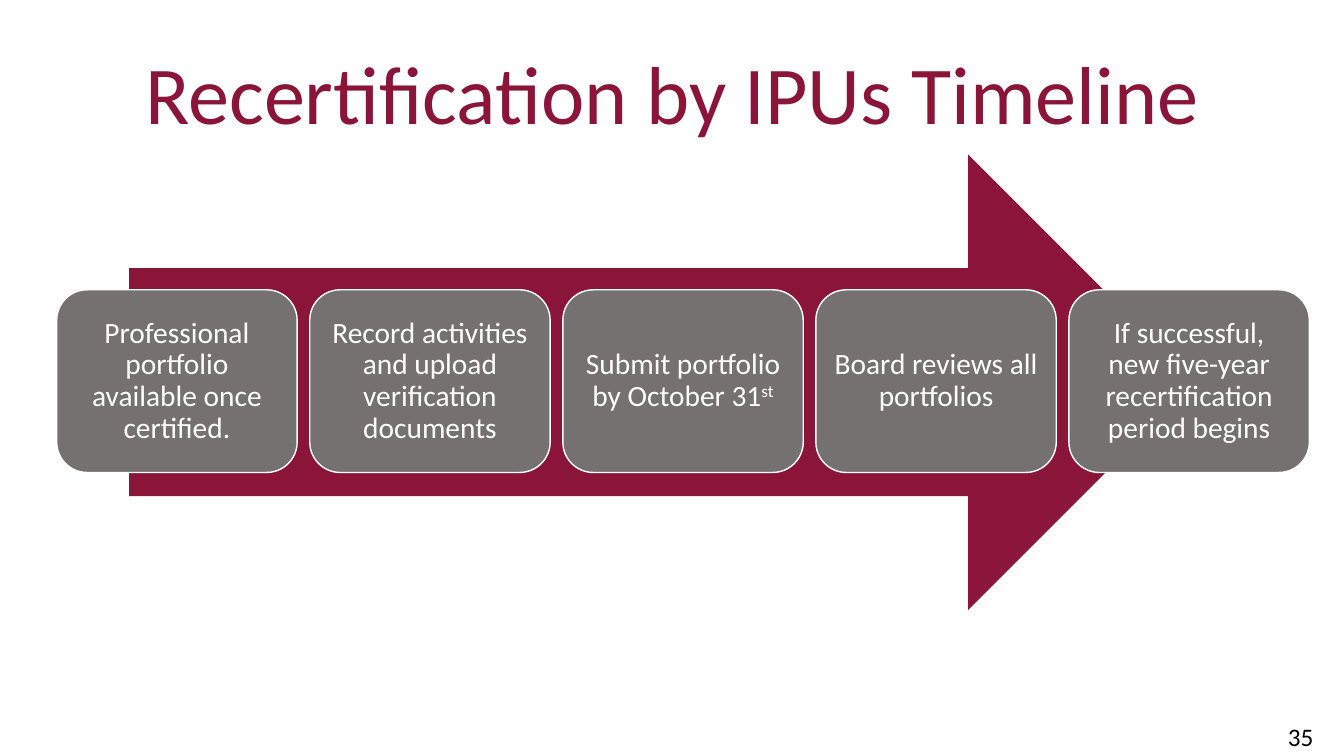
from dataclasses import dataclass

from pptx import Presentation
from pptx.dml.color import RGBColor
from pptx.enum.shapes import MSO_SHAPE as Preset
from pptx.enum.text import MSO_ANCHOR as Anchor, MSO_AUTO_SIZE as AutoSize, PP_ALIGN as Align
from pptx.shapes.autoshape import Shape
from pptx.slide import Slide
from pptx.util import Emu, Pt

EMU_PER_PX = 9525
MAROON, GRAY, WHITE, BLACK = "8A1538", "767171", "FFFFFF", "000000"


@dataclass(frozen=True)
class Box:
    """A rectangle in px."""
    left: int
    top: int
    width: int
    height: int


@dataclass(frozen=True)
class Step:
    """A timeline step with an optional superscript ending."""
    wording: str
    ordinal: str = ""


FIRST_CARD = Box(54, 276, 229, 174)
CARD_PITCH = 241
STEPS = (
    Step("Professional portfolio available once certified."),
    Step("Record activities and upload verification documents"),
    Step("Submit portfolio by October 31", "st"),
    Step("Board reviews all portfolios"),
    Step("If successful, new five-year recertification period begins"),
)


def px(length: int) -> Emu:
    """Turn px into EMU."""
    return Emu(length * EMU_PER_PX)


def color(code: str) -> RGBColor:
    """Turn a hex string into a colour."""
    return RGBColor.from_string(code)


def edges(box: Box) -> tuple[Emu, Emu, Emu, Emu]:
    """Give left, top, width and height in EMU."""
    return px(box.left), px(box.top), px(box.width), px(box.height)


def write(holder: Shape, step: Step, size: float, ink: str, align: Align,
          anchor: Anchor, inset: int, spacing: float | Pt) -> None:
    """Fill a shape with one formatted paragraph."""
    frame = holder.text_frame
    frame.word_wrap = True
    frame.auto_size = AutoSize.NONE
    frame.vertical_anchor = anchor
    frame.margin_left = frame.margin_right = px(inset)
    frame.margin_top = frame.margin_bottom = px(inset)
    paragraph = frame.paragraphs[0]
    paragraph.alignment = align
    paragraph.line_spacing = spacing
    paragraph.font.name = "Calibri"
    paragraph.font.size = Pt(size)
    paragraph.font.color.rgb = color(ink)
    paragraph.add_run().text = step.wording
    if step.ordinal:
        superscript = paragraph.add_run()
        superscript.text = step.ordinal
        superscript._r.get_or_add_rPr().set("baseline", "30000")


def add_filled(slide: Slide, preset: Preset, box: Box, fill: str) -> Shape:
    """Add a flat preset shape without an outline."""
    shape = slide.shapes.add_shape(preset, *edges(box))
    shape.shadow.inherit = False
    shape.fill.solid()
    shape.fill.fore_color.rgb = color(fill)
    shape.line.fill.background()
    return shape


def add_card(slide: Slide, step: Step, box: Box) -> None:
    """Add one rounded step card."""
    card = add_filled(slide, Preset.ROUNDED_RECTANGLE, box, GRAY)
    card.line.color.rgb = color(WHITE)
    card.line.width = Pt(1)
    write(card, step, 21, WHITE, Align.CENTER, Anchor.MIDDLE, 9, 0.9)


def main() -> None:
    """Build and save the timeline slide."""
    deck = Presentation()
    deck.slide_width, deck.slide_height = px(1280), px(720)
    slide = deck.slides.add_slide(deck.slide_layouts[5])

    title = slide.shapes.title
    title.left, title.top, title.width, title.height = edges(Box(0, 40, 1280, 94))
    write(title, Step("Recertification by IPUs Timeline"), 58.7, MAROON,
          Align.CENTER, Anchor.TOP, 0, Pt(70.4))

    add_filled(slide, Preset.RIGHT_ARROW, Box(123, 147, 1016, 434), MAROON)
    for index, step in enumerate(STEPS):
        left = FIRST_CARD.left + index * CARD_PITCH
        add_card(slide, step, Box(left, FIRST_CARD.top, FIRST_CARD.width, FIRST_CARD.height))

    page_number = slide.shapes.add_textbox(*edges(Box(972, 682, 288, 38)))
    write(page_number, Step("35"), 18, BLACK, Align.RIGHT, Anchor.MIDDLE, 9, 1.0)

    deck.save("out.pptx")


if __name__ == "__main__":
    main()
